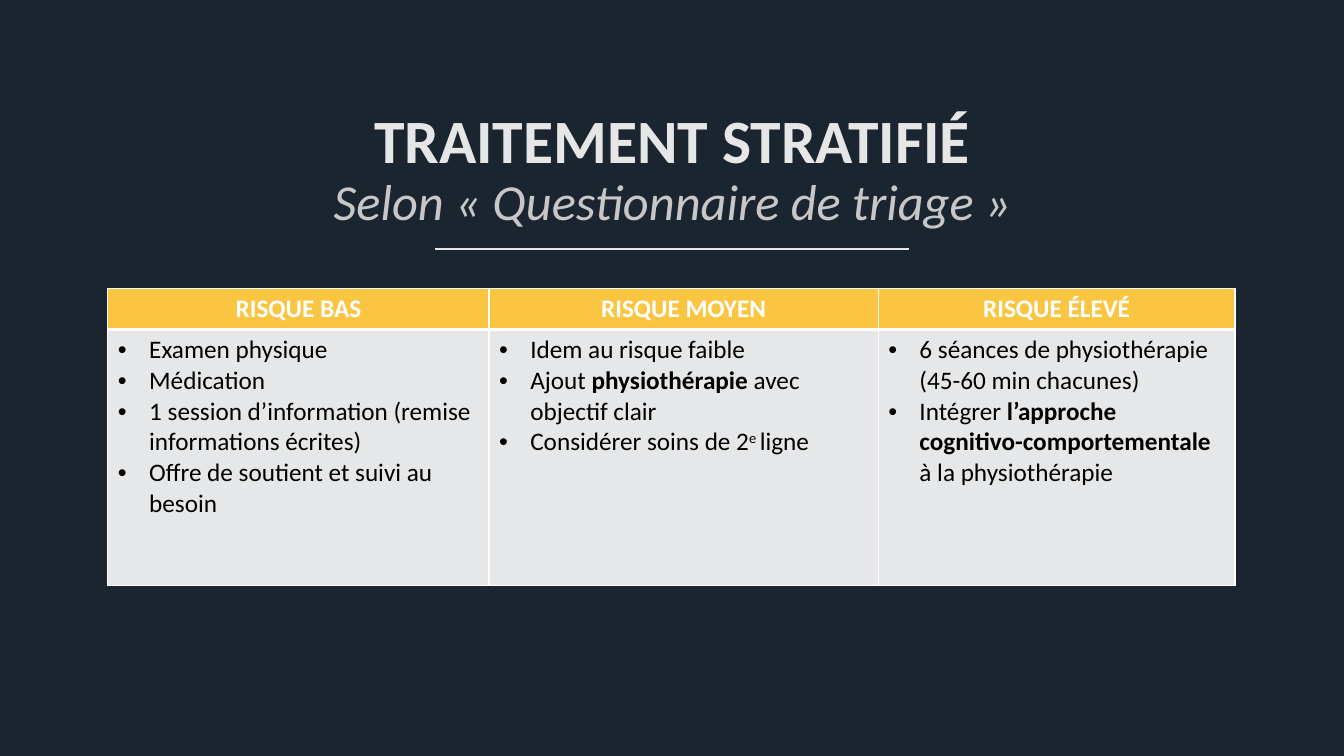
from pptx import Presentation
from pptx.dml.color import RGBColor
from pptx.enum.shapes import MSO_CONNECTOR
from pptx.enum.text import MSO_ANCHOR, PP_ALIGN
from pptx.oxml.ns import qn
from pptx.util import Pt
from lxml.etree import SubElement

PX = 9144  # 100 px to the inch
FONT = "Calibri"
PALE, WHITE = "E7E6E6", "FFFFFF"

HEADS = ["RISQUE BAS", "RISQUE MOYEN", "RISQUE ÉLEVÉ"]
# Each item is a list of runs: (text, style)
CARE = [
    [
        [("Examen physique", "")],
        [("Médication", "")],
        [("1 session d’information (remise informations écrites)", "")],
        [("Offre de soutient et suivi au besoin", "")],
    ],
    [
        [("Idem au risque faible", "")],
        [("Ajout ", ""), ("physiothérapie", "bold"), (" avec objectif clair", "")],
        [("Considérer soins de 2", ""), ("e ", "super"), ("ligne", "")],
    ],
    [
        [("6 séances de physiothérapie (45-60 min chacunes)", "")],
        [("Intégrer ", ""), ("l’approche cognitivo-comportementale ", "bold"),
         ("à la physiothérapie", "")],
    ],
]


def px(n):
    return round(n * PX)


def paint(hue):
    return RGBColor.from_string(hue)


def add_run(para, text, size, hue, bold=False, slant=False):
    run = para.add_run()
    run.text = text
    font = run.font
    font.name, font.size, font.bold, font.italic = FONT, Pt(size), bold, slant
    font.color.rgb = paint(hue)
    return run


def add_title(slide, x, y, w, h):
    title = slide.shapes.title
    title.left, title.top, title.width, title.height = map(px, (x, y, w, h))
    frame = title.text_frame
    frame.word_wrap = True
    frame.vertical_anchor = MSO_ANCHOR.MIDDLE
    para = frame.paragraphs[0]
    para.alignment, para.line_spacing = PP_ALIGN.CENTER, 0.9
    add_run(para, "TRAITEMENT STRATIFIÉ", 44, PALE, bold=True)
    para.add_line_break()
    add_run(para, "Selon «\u00a0Questionnaire de triage\u00a0»", 36, "C7C7C7", slant=True)


def add_rule(slide, x, y, w):
    rule = slide.shapes.add_connector(
        MSO_CONNECTOR.STRAIGHT, px(x + w), px(y), px(x), px(y))
    rule.line.color.rgb = paint(PALE)
    rule.line.width = Pt(2)
    SubElement(rule._element.spPr, qn("a:effectLst"))


def set_cell(cell, hue, top, base):
    # Borders come before the fill in the cell's XML
    props = cell._tc.get_or_add_tcPr()
    for side, width in zip("LRTB", (1, 1, top, base)):
        edge = SubElement(props, qn(f"a:ln{side}"), w=str(Pt(width)))
        fill = SubElement(edge, qn("a:solidFill"))
        SubElement(fill, qn("a:srgbClr"), val=WHITE)
    cell.fill.solid()
    cell.fill.fore_color.rgb = paint(hue)


def add_list(cell, items):
    frame = cell.text_frame
    for i, runs in enumerate(items):
        para = frame.add_paragraph() if i else frame.paragraphs[0]
        props = para._p.get_or_add_pPr()
        props.set("marL", str(px(31)))
        props.set("indent", str(px(-31)))
        SubElement(props, qn("a:buFont"), typeface="Arial")
        SubElement(props, qn("a:buChar"), char="•")
        for text, style in runs:
            run = add_run(para, text, 18, "000000", bold=style == "bold")
            if style == "super":
                run.font._element.set("baseline", "30000")


def add_grid(slide, x, y, widths, heights):
    grid = slide.shapes.add_table(
        len(heights), len(widths), px(x), px(y), px(sum(widths)), px(sum(heights))).table
    for row, tall in zip(grid.rows, heights):
        row.height = px(tall)
    for i, (wide, head, items) in enumerate(zip(widths, HEADS, CARE)):
        grid.columns[i].width = px(wide)
        top, body = grid.cell(0, i), grid.cell(1, i)
        set_cell(top, "FAC642", 1, 3)
        set_cell(body, "E5E7E9", 3, 1)
        para = top.text_frame.paragraphs[0]
        para.alignment = PP_ALIGN.CENTER
        add_run(para, head, 18, WHITE, bold=True)
        add_list(body, items)


def main():
    deck = Presentation()
    deck.slide_width, deck.slide_height = px(1333), px(750)
    slide = deck.slides.add_slide(deck.slide_layouts[5])
    back = slide.background.fill
    back.solid()
    back.fore_color.rgb = paint("1B2530")
    add_title(slide, 92, 97, 1150, 145)
    add_grid(slide, 107, 286, [378, 386, 354], [41, 254])
    add_rule(slide, 431, 247, 471)
    deck.save("out.pptx")


if __name__ == "__main__":
    main()
